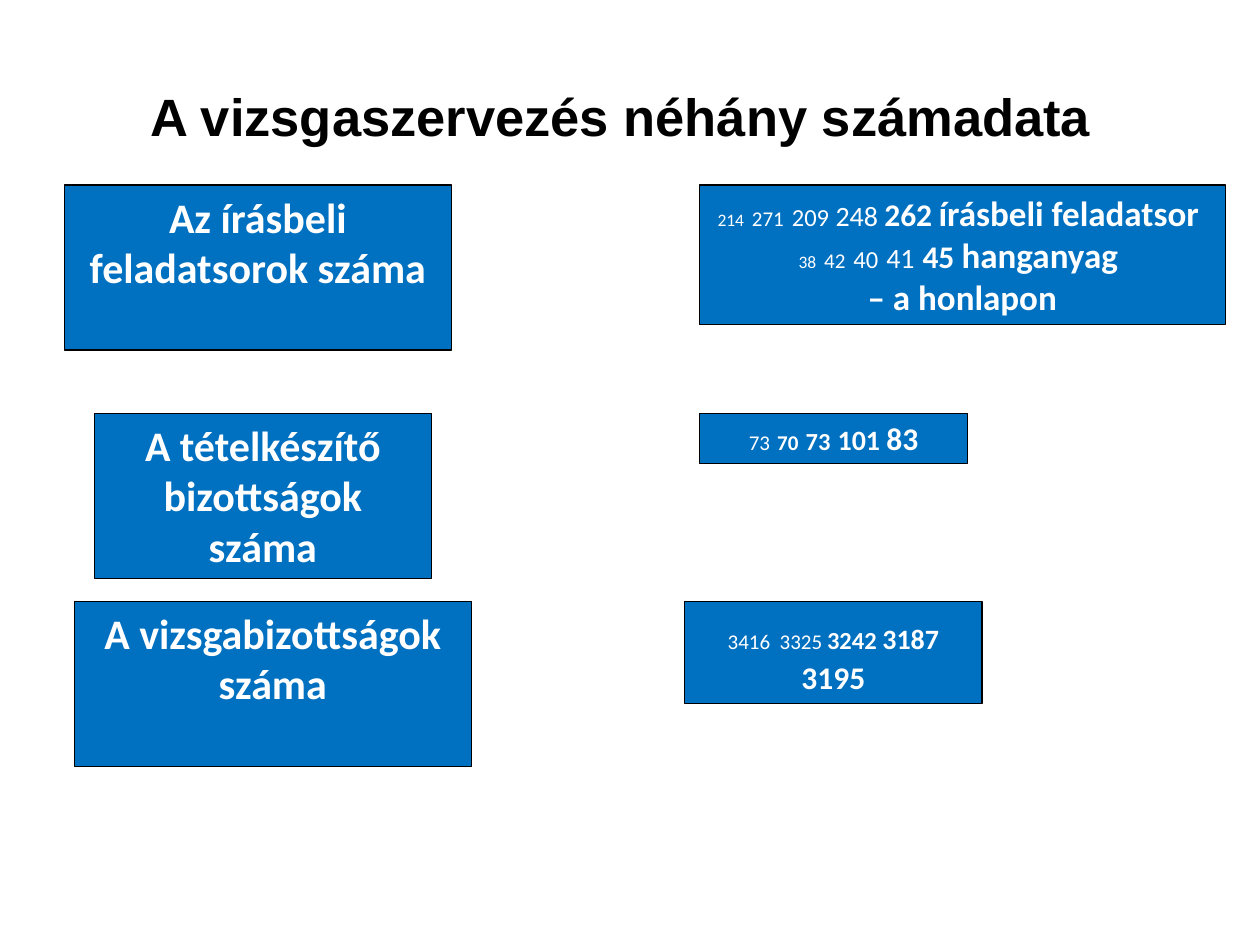
from dataclasses import dataclass

from pptx import Presentation
from pptx.dml.color import RGBColor
from pptx.enum.shapes import MSO_SHAPE as Shape
from pptx.enum.text import MSO_ANCHOR as Anchor, PP_ALIGN as Align
from pptx.util import Cm, Pt

BLUE = RGBColor(0x00, 0x70, 0xC0)
BLACK = RGBColor(0x00, 0x00, 0x00)
WHITE = RGBColor(0xFF, 0xFF, 0xFF)


@dataclass(frozen=True)
class Words:
    text: str
    size: int
    bold: bool = False
    new_line: bool = False


@dataclass(frozen=True)
class Panel:
    left: float
    top: float
    width: float
    height: float
    words: tuple[Words, ...]


def heading(text: str) -> tuple[Words, ...]:
    return (Words(text, 24, True),)


TASKS_TOP, COMMITTEES_TOP, BOARDS_TOP = 3.73, 8.33, 12.12
HEADING_HEIGHT = 3.33
FIGURES_LEFT = 14.1

PANELS = (
    Panel(1.3, TASKS_TOP, 7.8, HEADING_HEIGHT, heading("Az írásbeli feladatsorok száma")),
    Panel(1.9, COMMITTEES_TOP, 6.8, HEADING_HEIGHT, heading("A tételkészítő bizottságok száma")),
    Panel(FIGURES_LEFT, COMMITTEES_TOP, 5.41, 1.02, (
        Words("73", 12),
        Words(" ", 18),
        Words("70", 12, True),
        Words(" ", 18, True),
        Words("73", 14, True),
        Words(" ", 18, True),
        Words("101 ", 16, True),
        Words("83", 18, True),
    )),
    Panel(FIGURES_LEFT, TASKS_TOP, 10.6, 2.82, (
        Words("214", 10),
        Words(" ", 20),
        Words("271", 12),
        Words(" ", 20),
        Words("209", 14),
        Words(" 248 ", 16),
        Words("262", 18, True),
        Words(" ", 16, True),
        Words("írásbeli feladatsor ", 20, True),
        Words("38", 10, new_line=True),
        Words(" ", 20),
        Words("42", 12),
        Words(" ", 20),
        Words("40", 14),
        Words(" ", 20),
        Words("41", 16),
        Words(" ", 20),
        Words("45 ", 18, True),
        Words("hanganyag ", 20, True),
        Words("– a honlapon", 20, True, new_line=True),
    )),
    Panel(1.5, BOARDS_TOP, 8.0, HEADING_HEIGHT, heading("A vizsgabizottságok száma")),
    Panel(13.8, BOARDS_TOP, 6.0, 2.06, (
        Words("3416", 12),
        Words(" ", 24, True),
        Words("3325 ", 12),
        Words("3242 ", 14, True),
        Words("3187 ", 16, True),
        Words("3195", 18, True),
    )),
)


def write(frame, words: tuple[Words, ...], font_name: str, color: RGBColor, anchor):
    frame.word_wrap = True
    frame.vertical_anchor = anchor
    paragraph = frame.paragraphs[0]
    paragraph.alignment = Align.CENTER
    for part in words:
        if part.new_line:
            paragraph.add_line_break()
        run = paragraph.add_run()
        run.text = part.text
        run.font.name = font_name
        run.font.size = Pt(part.size)
        run.font.bold = part.bold
        run.font.color.rgb = color
    return paragraph


def draw_title(slide) -> None:
    title = slide.shapes.add_textbox(Cm(0.76), Cm(1.12), Cm(23.8), Cm(2.59))
    words = (Words("A vizsgaszervezés néhány számadata ", 30, True),)
    write(title.text_frame, words, "Arial", BLACK, Anchor.MIDDLE).line_spacing = 0.9


def draw_panel(slide, panel: Panel) -> None:
    box = slide.shapes.add_shape(
        Shape.RECTANGLE, Cm(panel.left), Cm(panel.top), Cm(panel.width), Cm(panel.height)
    )
    box.shadow.inherit = False
    box.fill.solid()
    box.fill.fore_color.rgb = BLUE
    box.line.color.rgb = BLACK
    box.line.width = Pt(0.75)
    write(box.text_frame, panel.words, "Calibri", WHITE, Anchor.TOP)


def main() -> None:
    deck = Presentation()
    deck.slide_width, deck.slide_height = Cm(25.4), Cm(19.05)
    slide = deck.slides.add_slide(deck.slide_layouts[6])
    draw_title(slide)
    for panel in PANELS:
        draw_panel(slide, panel)
    deck.save("out.pptx")


if __name__ == "__main__":
    main()
